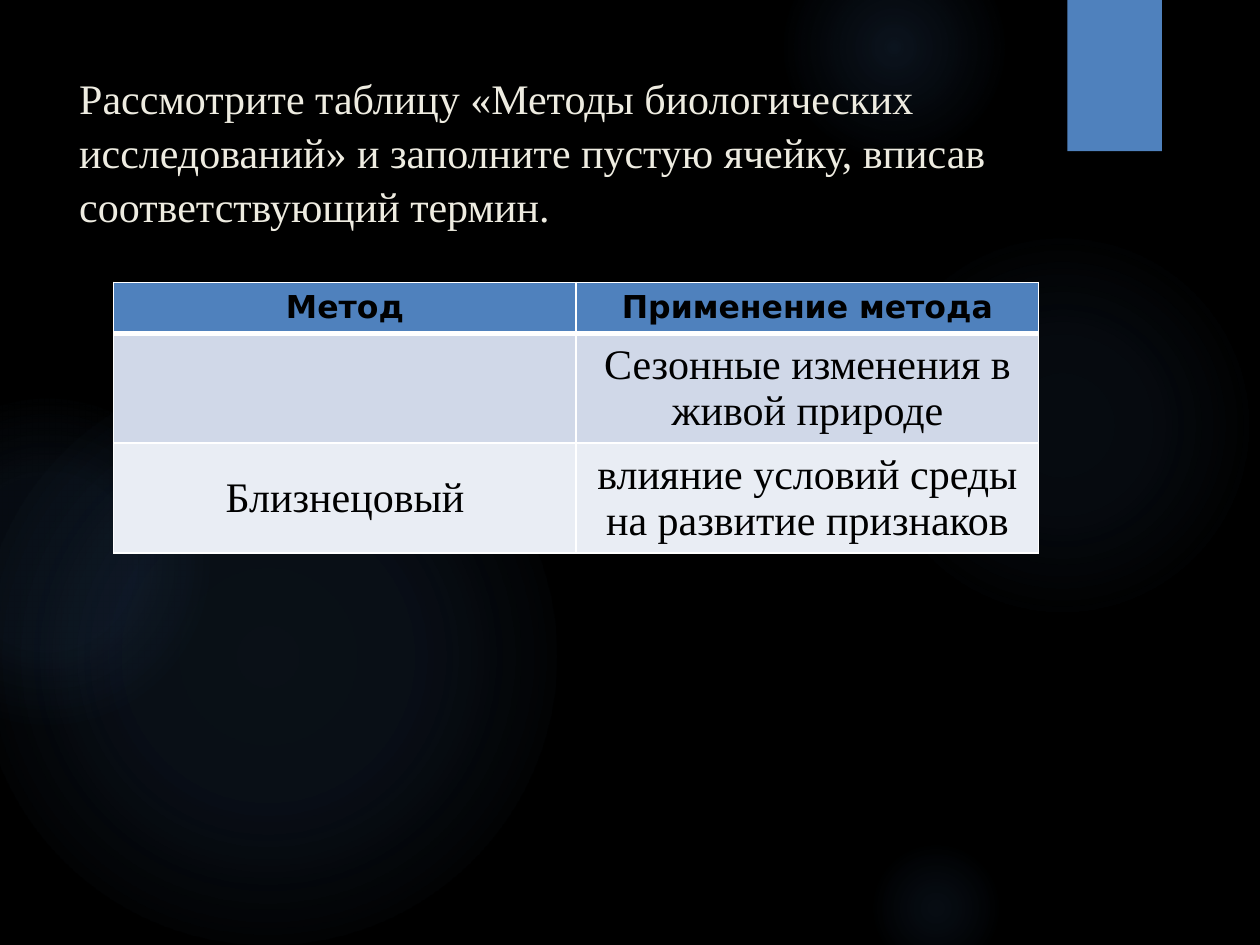
from lxml import etree
from pptx import Presentation
from pptx import util as u
from pptx.dml.color import RGBColor
from pptx.enum import shapes, text
from pptx.oxml.ns import qn

COLOURS = {"night": "000000", "glow": "558ED5", "accent": "4F81BD", "heading": "EEECE1",
           "ink": "000000", "grid": "FFFFFF", "odd": "D0D8E8", "even": "E9EDF4"}
SERIF, SANS = "Times New Roman", "DejaVu Sans"


def rgb(name):
    """Return the named colour."""
    return RGBColor.from_string(COLOURS[name])


def add_node(parent, tag, **attributes):
    """Append a DrawingML element and return it."""
    return etree.SubElement(parent, qn(f"a:{tag}"), {k: str(v) for k, v in attributes.items()})


def write(frame, words, size=24, font=SERIF, colour="ink", bold=False, align=None, spacing=None):
    """Put one formatted paragraph into a text frame."""
    paragraph = frame.paragraphs[0]
    paragraph.alignment = align
    paragraph.line_spacing = spacing
    run = paragraph.add_run()
    run.text = words
    run.font.size, run.font.name, run.font.bold = u.Pt(size), font, bold
    run.font.color.rgb = rgb(colour)


class Deck:
    """Hold the presentation style and the current slide."""

    def __init__(self, width, height):
        """Start a one-slide presentation on a dark background."""
        self.file = Presentation()
        self.file.slide_width, self.file.slide_height = u.Pt(width), u.Pt(height)
        self.slide = self.file.slides.add_slide(self.file.slide_layouts[6])
        self.slide.background.fill.solid()
        self.slide.background.fill.fore_color.rgb = rgb("night")

    def glow(self, left, top, size, stops):
        """Draw a circle that fades outwards through (position, opacity) stops."""
        circle = self.slide.shapes.add_shape(
            shapes.MSO_SHAPE.OVAL, u.Pt(left), u.Pt(top), u.Pt(size), u.Pt(size))
        circle.shadow.inherit = False
        circle.line.fill.background()
        circle.fill.gradient()
        gradient = circle._element.spPr.find(qn("a:gradFill"))
        for child in list(gradient):
            gradient.remove(child)
        stop_list = add_node(gradient, "gsLst")
        for position, opacity in stops:
            stop = add_node(stop_list, "gs", pos=position * 1000)
            colour = add_node(stop, "srgbClr", val=COLOURS["glow"])
            add_node(colour, "alpha", val=opacity * 1000)
        centre = add_node(gradient, "path", path="circle")
        add_node(centre, "fillToRect", l=50000, t=50000, r=50000, b=50000)

    def ribbon(self, left, top, width, height):
        """Draw the accent rectangle with a soft shadow below."""
        bar = self.slide.shapes.add_shape(
            shapes.MSO_SHAPE.RECTANGLE, u.Pt(left), u.Pt(top), u.Pt(width), u.Pt(height))
        bar.shadow.inherit = False
        bar.fill.solid()
        bar.fill.fore_color.rgb = rgb("accent")
        bar.line.fill.background()
        effects = bar._element.spPr.find(qn("a:effectLst"))
        shade = add_node(effects, "outerShdw", blurRad=u.Pt(3), dist=u.Pt(2),
                         dir=5400000, rotWithShape=0)
        add_node(add_node(shade, "srgbClr", val=COLOURS["night"]), "alpha", val=45000)

    def heading(self, words, left, top, width, height):
        """Add the task wording."""
        frame = self.slide.shapes.add_textbox(
            u.Pt(left), u.Pt(top), u.Pt(width), u.Pt(height)).text_frame
        frame.word_wrap = True
        write(frame, words, colour="heading", spacing=1.07)

    def border(self, cell, **widths):
        """Set the borders of a cell, given by side."""
        properties = cell._tc.get_or_add_tcPr()
        for index, side in enumerate("LRTB"):
            line = add_node(properties, f"ln{side}", w=u.Pt(widths.get(side, 1)))
            add_node(add_node(line, "solidFill"), "srgbClr", val=COLOURS["grid"])
            properties.insert(index, line)

    def table(self, rows, left, top, width, heights):
        """Add a table with a header row and alternating body rows."""
        grid = self.slide.shapes.add_table(
            len(rows), len(rows[0]), u.Pt(left), u.Pt(top), u.Pt(width), u.Pt(sum(heights))).table
        for r, (row, height) in enumerate(zip(rows, heights)):
            grid.rows[r].height = u.Pt(height)
            header = r == 0
            for c, words in enumerate(row):
                cell = grid.cell(r, c)
                cell.fill.solid()
                cell.fill.fore_color.rgb = rgb("accent" if header else "odd" if r % 2 else "even")
                cell.vertical_anchor = text.MSO_ANCHOR.MIDDLE
                cell.margin_left = cell.margin_right = u.Pt(2.4)
                cell.margin_top = cell.margin_bottom = u.Pt(2.6)
                self.border(cell, T=3 if r == 1 else 1, B=3 if header else 1)
                if words:
                    look = {"size": 18, "font": SANS, "bold": True} if header else {}
                    write(cell.text_frame, words, align=text.PP_ALIGN.CENTER, **look)


def main():
    """Build and save the slide."""
    deck = Deck(720, 540)
    for left, top, size, stops in [
        (496, 132, 222, [(0, 7), (36, 6), (69, 0)]),
        (448, -36, 126, [(0, 14), (36, 7), (73, 0)]),
        (496, 480, 78, [(0, 9), (36, 5), (66, 0)]),
        (-12, 210, 330, [(0, 11), (36, 10), (75, 0)]),
        (-66, 228, 186, [(0, 8), (36, 8), (72, 0)]),
    ]:
        deck.glow(left, top, size, stops)
    deck.ribbon(610, 0, 54, 86.4)
    deck.heading("Рассмотрите таблицу «Методы биологических исследований» и заполните "
                 "пустую ячейку, вписав соответствующий термин.", 38.2, 36, 556, 110)
    deck.table([
        ("Метод", "Применение метода"),
        ("", "Сезонные изменения в живой природе"),
        ("Близнецовый", "влияние условий среды на развитие признаков"),
    ], 65, 161.4, 528.6, (29, 59, 59))
    deck.file.save("out.pptx")


if __name__ == "__main__":
    main()
